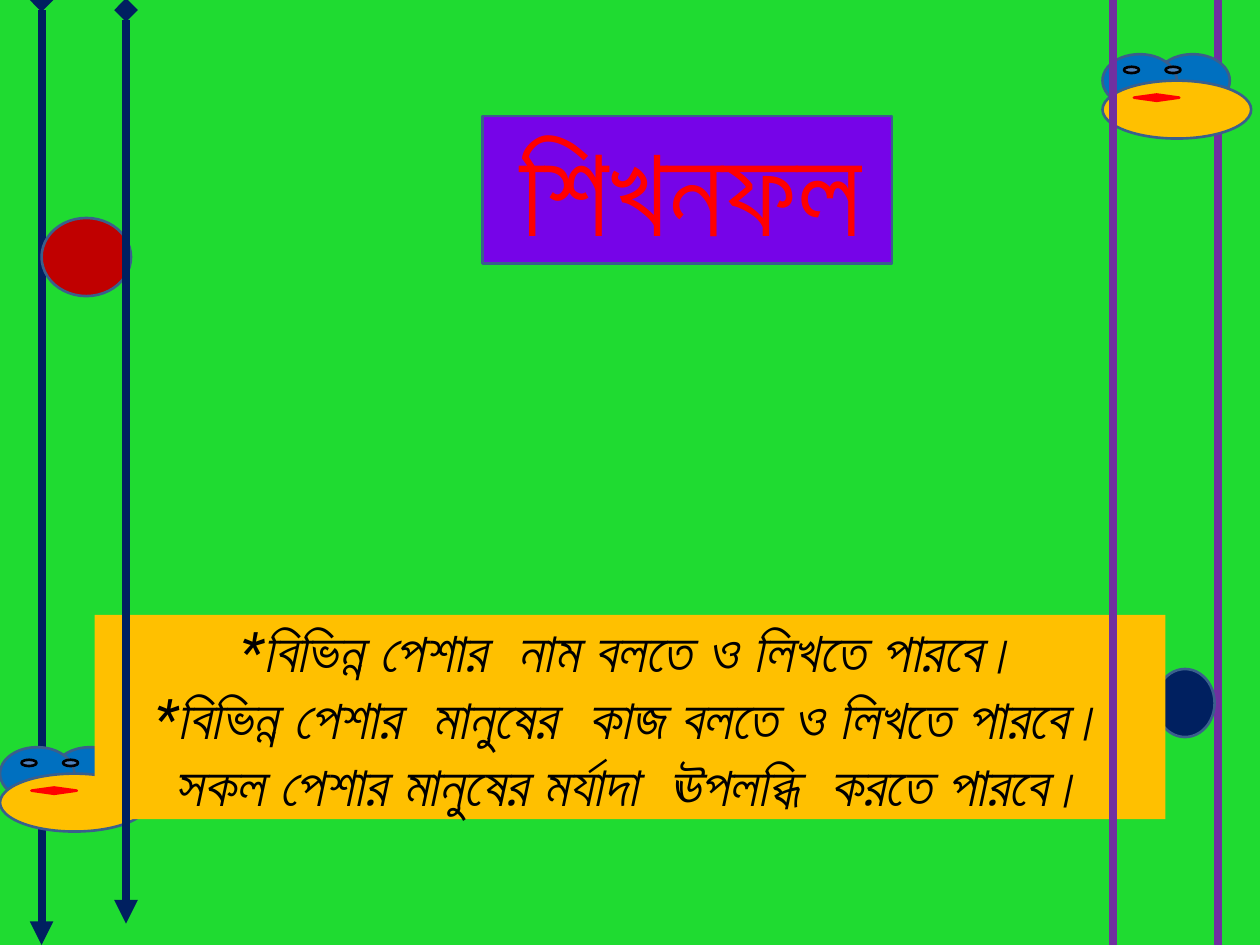
import pptx
import pptx.util
import pptx.dml.color
import pptx.enum.shapes
import pptx.enum.text
import pptx.oxml.ns
from dataclasses import dataclass
from lxml import etree

Inches = pptx.util.Inches
KIND = pptx.enum.shapes.MSO_SHAPE
ALIGN = pptx.enum.text.PP_ALIGN
ANCHOR = pptx.enum.text.MSO_ANCHOR
FIT = pptx.enum.text.MSO_AUTO_SIZE


@dataclass(frozen=True)
class Theme:
    font: str = "Roboto"
    title: int = 72
    body: int = 32
    edge: float = 1.5
    rod: float = 4.5
    green: str = "1FDB31"
    violet: str = "7604E8"
    purple: str = "7030A0"
    navy: str = "002060"
    blue: str = "0070C0"
    steel: str = "4F81BD"
    rim: str = "3A5F8C"
    gold: str = "FFC000"
    red: str = "FF0000"
    wine: str = "C00000"
    black: str = "000000"


def color(code):
    return pptx.dml.color.RGBColor.from_string(code)


def apply(target, values):
    for name, value in values.items():
        setattr(target, name, value)


def add_tag(parent, tag, **values):
    return etree.SubElement(parent, pptx.oxml.ns.qn(tag), values)


class Board:
    def __init__(self, theme, slide):
        self.theme = theme
        self.slide = slide
        fill = slide.background.fill
        fill.solid()
        fill.fore_color.rgb = color(theme.green)

    def shape(self, kind, box, fill, line=None):
        item = self.slide.shapes.add_shape(kind, *map(Inches, box))
        item.shadow.inherit = False
        item.fill.solid()
        item.fill.fore_color.rgb = color(fill)
        item.line.color.rgb = color(line or self.theme.rim)
        item.line.width = pptx.util.Pt(self.theme.edge)

    def rod(self, x, top, end, tone, ends=None):
        """Draw an upright line; ends maps headEnd and tailEnd to arrow types."""
        item = self.slide.shapes.add_connector(
            pptx.enum.shapes.MSO_CONNECTOR.STRAIGHT,
            Inches(x), Inches(top), Inches(x), Inches(end))
        item.line.color.rgb = color(tone)
        item.line.width = pptx.util.Pt(self.theme.rod)
        for tag, kind in (ends or {}).items():
            add_tag(item.line._get_or_add_ln(), "a:" + tag, type=kind)
        add_tag(item.element.spPr, "a:effectLst")

    def duck(self, x, y):
        """Draw a duck face whose top left corner is at x, y."""
        look = self.theme
        for dx in (0.42, 0):
            self.shape(KIND.OVAL, (x + dx, y, 0.59, 0.42), look.blue)
        self.shape(KIND.OVAL, (x, y + 0.21, 1.18, 0.46), look.gold)
        for dx in (0.17, 0.5):
            self.shape(KIND.FLOWCHART_CONNECTOR, (x + dx, y + 0.1, 0.12, 0.05),
                       look.steel, look.black)
        self.shape(KIND.FLOWCHART_DECISION, (x + 0.25, y + 0.32, 0.36, 0.05),
                   look.red, look.red)

    def text(self, item, box, lines, frame, font, tone):
        """Fill a placeholder, and bring it in front of all shapes so far."""
        self.slide.shapes.element.append(item.element)
        apply(item, dict(zip(("left", "top", "width", "height"),
                             map(Inches, box))))
        item.text_frame.text = "\n".join(lines)
        apply(item.text_frame, {"word_wrap": True, **frame})
        for para in item.text_frame.paragraphs:
            props = para._p.get_or_add_pPr()
            apply(para, {"alignment": ALIGN.CENTER, "line_spacing": 1.0,
                         "space_before": pptx.util.Pt(0)})
            props.set("marL", "0")
            props.set("indent", "0")
            add_tag(props, "a:buNone")
            for run in para.runs:
                apply(run.font, {"name": self.theme.font, **font})
                run.font.color.rgb = color(tone)


def main():
    deck = pptx.Presentation()
    deck.slide_width, deck.slide_height = Inches(10), Inches(7.5)
    slide = deck.slides.add_slide(deck.slide_layouts[1])
    look = Theme()
    board = Board(look, slide)
    title, goals = slide.placeholders
    arrows = {"headEnd": "diamond", "tailEnd": "triangle"}

    board.shape(KIND.RECTANGLE, (3.83, 0.92, 3.25, 1.17), look.violet)
    board.rod(0.33, 0, 7.5, look.navy, arrows)
    board.rod(9.67, 0, 7.5, look.purple)
    for x, y in ((8.75, 0.43), (0, 5.93)):
        board.duck(x, y)
    board.shape(KIND.OVAL, (0.33, 1.73, 0.71, 0.62), look.wine)
    board.shape(KIND.OVAL, (9.17, 5.31, 0.47, 0.54), look.navy)

    board.text(title, (3.83, 0.83, 3.31, 1.25), ["শিখনফল"],
               {"vertical_anchor": ANCHOR.TOP, "auto_size": FIT.NONE},
               {"size": pptx.util.Pt(look.title)}, look.red)
    goals.fill.solid()
    goals.fill.fore_color.rgb = color(look.gold)
    board.text(goals, (0.75, 4.83, 8.5, 1.72),
               ["*বিভিন্ন পেশার  নাম বলতে ও লিখতে পারবে।",
                "*বিভিন্ন পেশার  মানুষের  কাজ বলতে ও লিখতে পারবে।",
                "সকল পেশার মানুষের মর্যাদা  ঊপলব্ধি  করতে পারবে।"],
               {"vertical_anchor": ANCHOR.MIDDLE,
                "auto_size": FIT.SHAPE_TO_FIT_TEXT},
               {"size": pptx.util.Pt(look.body), "italic": True}, look.black)

    board.rod(1, 0.08, 7.33, look.navy, arrows)
    board.rod(8.83, 0, 7.5, look.purple)
    deck.save("out.pptx")


if __name__ == "__main__":
    main()
